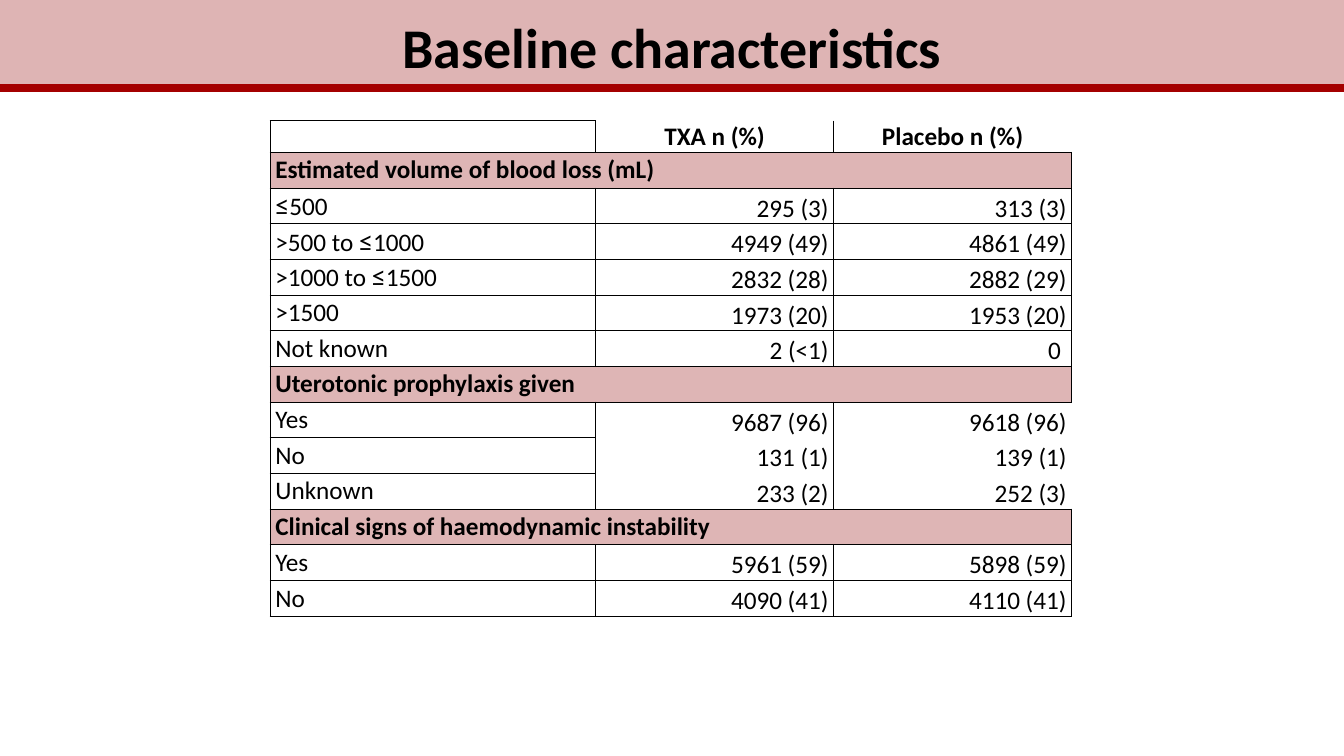
"""Build the slide of baseline characteristics by treatment arm."""
from lxml.etree import SubElement
from pptx import Presentation
from pptx.dml.color import RGBColor
from pptx.enum.shapes import MSO_CONNECTOR
from pptx.enum.text import MSO_ANCHOR as ANCHOR, MSO_AUTO_SIZE, PP_ALIGN as ALIGN
from pptx.oxml import parse_xml
from pptx.oxml.ns import nsdecls, qn
from pptx.util import Pt

BLACK, RED, BAND_PINK, SECTION_PINK = "000000", "A40000", "DEB4B4", "DEB5B5"
ALL_EDGES = ("lnL", "lnR", "lnT", "lnB")
NO_GRID_STYLE = "{2D5ABB26-0587-4C30-8999-92F81FD0307C}"


def rgb(colour):
    return RGBColor.from_string(colour)


def write(paragraph, text, size, bold):
    run = paragraph.add_run()
    run.text = text
    for key, value in {"name": "Calibri", "size": Pt(size), "bold": bold}.items():
        setattr(run.font, key, value)
    run.font.color.rgb = rgb(BLACK)


deck = Presentation()
deck.slide_width, deck.slide_height = Pt(960), Pt(540)
slide = deck.slides.add_slide(deck.slide_layouts[5])

heading = slide.shapes.title
for key, value in {"left": 0, "top": 0, "width": 960, "height": 65.5}.items():
    setattr(heading, key, Pt(value))
heading.fill.solid()
heading.fill.fore_color.rgb = rgb(BAND_PINK)
heading_format = {"vertical_anchor": ANCHOR.MIDDLE, "word_wrap": True,
                  "auto_size": MSO_AUTO_SIZE.NONE}
for key, value in heading_format.items():
    setattr(heading.text_frame, key, value)
heading_line = heading.text_frame.paragraphs[0]
heading_line.alignment = ALIGN.CENTER
write(heading_line, "Baseline characteristics", 40, True)

rule = slide.shapes.add_connector(
    MSO_CONNECTOR.STRAIGHT, Pt(-0.5), Pt(62.8), Pt(960), Pt(62.8))
rule.line.color.rgb = rgb(RED)
rule.line.width = Pt(6)
SubElement(rule._element.spPr, qn("a:effectLst"))

characteristics = [
    ("", "TXA n (%)", "Placebo n (%)"),
    ("Estimated volume of blood loss (mL)",),
    ("≤500", "295 (3)", "313 (3)"),
    (">500 to ≤1000", "4949 (49)", "4861 (49)"),
    (">1000 to ≤1500", "2832 (28)", "2882 (29)"),
    (">1500", "1973 (20)", "1953 (20)"),
    ("Not known", "2 (<1)", "0 "),
    ("Uterotonic prophylaxis given",),
    ("Yes", "9687 (96)", "9618 (96)"),
    ("No", "131 (1)", "139 (1)"),
    ("Unknown", "233 (2)", "252 (3)"),
    ("Clinical signs of haemodynamic instability",),
    ("Yes", "5961 (59)", "5898 (59)"),
    ("No", "4090 (41)", "4110 (41)"),
]
open_rows = (0, 8, 9, 10)
column_widths = (232.4, 170, 170)
header_height, row_height = 22.7, 25.5

grid = slide.shapes.add_table(
    len(characteristics), 3, Pt(193.1), Pt(86.2), Pt(sum(column_widths)),
    Pt(header_height + row_height * (len(characteristics) - 1))).table
grid.first_row = grid.horz_banding = False
grid._tbl.tblPr.find(qn("a:tableStyleId")).text = NO_GRID_STYLE
for column, width in zip(grid.columns, column_widths):
    column.width = Pt(width)

for r, entries in enumerate(characteristics):
    grid.rows[r].height = Pt(row_height if r else header_height)
    is_section = len(entries) == 1
    if is_section:
        grid.cell(r, 0).merge(grid.cell(r, 2))

    for c in range(3):
        cell = grid.cell(r, c)
        is_label = c == 0
        is_header = r == 0
        cell_format = {
            "margin_left": Pt(3.6 if is_label else 0),
            "margin_right": Pt(0 if is_label or is_header else 3.6),
            "margin_top": 0,
            "margin_bottom": 0,
            "vertical_anchor": ANCHOR.MIDDLE if is_label or is_header else ANCHOR.BOTTOM,
        }
        for key, value in cell_format.items():
            setattr(cell, key, value)

        edges = ("lnL",) if r in open_rows and not is_label else ALL_EDGES
        for edge in edges:
            cell._tc.get_or_add_tcPr().append(parse_xml(
                f'<a:{edge} {nsdecls("a")} w="12700"><a:solidFill>'
                f'<a:srgbClr val="{BLACK}"/></a:solidFill></a:{edge}>'))
        if is_section:
            cell.fill.solid()
            cell.fill.fore_color.rgb = rgb(SECTION_PINK)
        else:
            cell.fill.background()

        if c >= len(entries) or not entries[c]:
            continue
        paragraph = cell.text_frame.paragraphs[0]
        if is_label:
            paragraph.alignment = ALIGN.LEFT
        else:
            paragraph.alignment = ALIGN.CENTER if is_header else ALIGN.RIGHT
        for part, size in zip(entries[c].partition("≤"), (18, 20, 18)):
            if part:
                write(paragraph, part, size, is_section or is_header)

deck.save("out.pptx")
